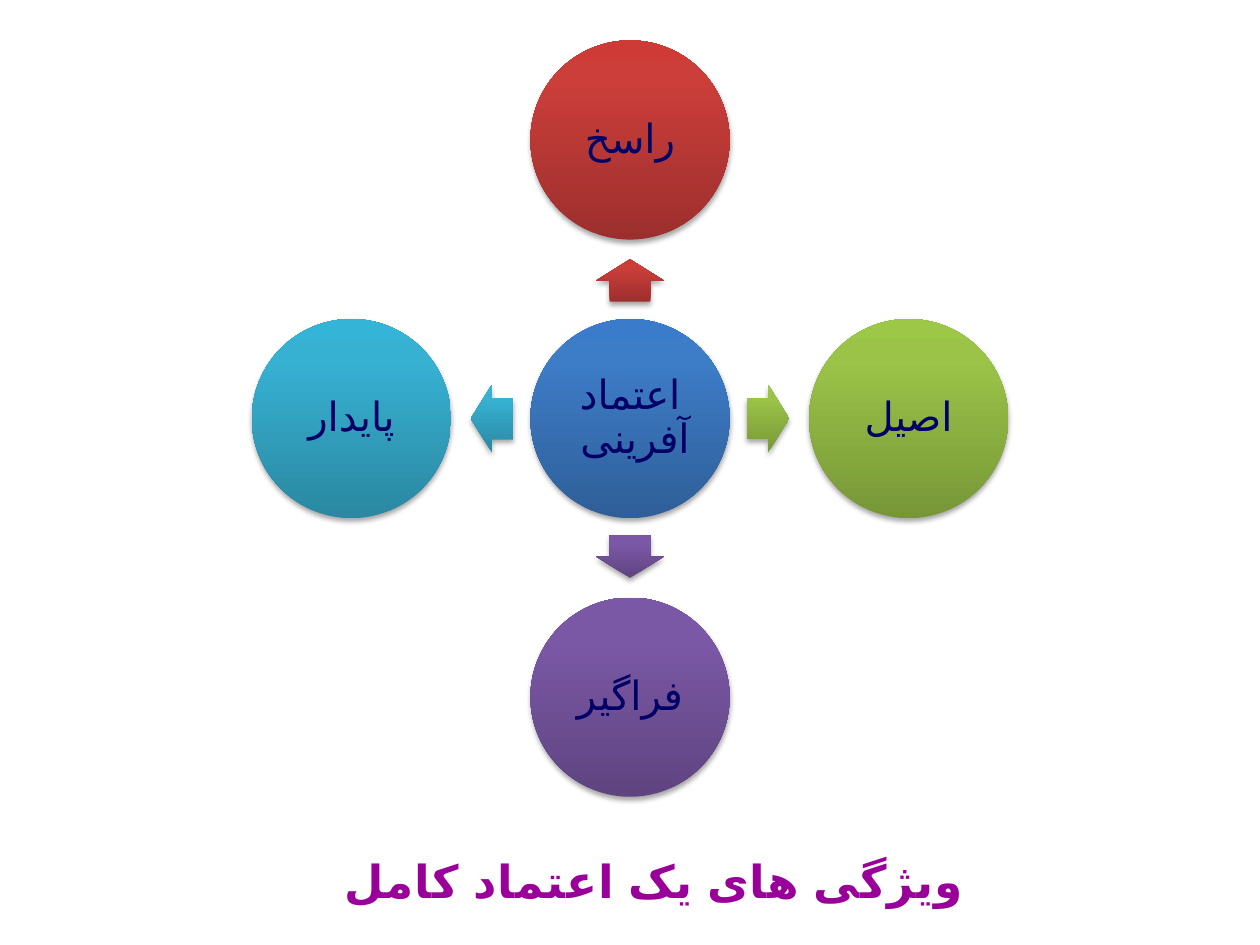
import math
from dataclasses import dataclass

import pptx
import pptx.dml.color
import pptx.enum.lang
import pptx.enum.shapes
import pptx.enum.text
import pptx.oxml
import pptx.oxml.ns
import pptx.util

Pt = pptx.util.Pt
RGB = pptx.dml.color.RGBColor.from_string
Shapes = pptx.enum.shapes.MSO_SHAPE
Anchor = pptx.enum.text.MSO_ANCHOR
Align = pptx.enum.text.PP_ALIGN
qn = pptx.oxml.ns.qn
NAMESPACE = pptx.oxml.ns.nsdecls("a")


@dataclass(frozen=True)
class Theme:
    title_font: str = "Arial"
    title_size: float = 26
    title_color: str = "990099"
    title_outline: str = "CC00CC"
    body_font: str = "Calibri"
    body_size: float = 23
    body_color: str = "000066"
    blue: tuple = ("2F5F99", "3D7CC7", "3A7CCB")
    red: tuple = ("9C2F2D", "CB3E3A", "CE3B37")
    green: tuple = ("779737", "9BC348", "9DC746")
    purple: tuple = ("5F4480", "7B58A6", "7C57A8")
    cyan: tuple = ("2A88A2", "37B1D2", "34B4D6")


class Diagram:
    def __init__(self, slide, theme):
        self.slide = slide
        self.theme = theme

    def add_run(self, paragraph, text, font, size, color):
        run = paragraph.add_run()
        run.text = text
        run.font.name = font
        run.font.size = Pt(size)
        run.font.color.rgb = RGB(color)
        run.font.language_id = pptx.enum.lang.MSO_LANGUAGE_ID.FARSI
        return run

    def title(self, text, left, top, width, height):
        theme = self.theme
        title = self.slide.shapes.title
        title.left, title.top = Pt(left), Pt(top)
        title.width, title.height = Pt(width), Pt(height)
        frame = title.text_frame
        frame.word_wrap = True
        frame.auto_size = pptx.enum.text.MSO_AUTO_SIZE.SHAPE_TO_FIT_TEXT
        frame.vertical_anchor = Anchor.TOP
        paragraph = frame.paragraphs[0]
        paragraph.alignment = Align.CENTER
        run = self.add_run(paragraph, text, theme.title_font, theme.title_size, theme.title_color)
        run.font.bold = True
        properties = run.font._element
        properties.set("spc", "50")
        properties.insert(0, pptx.oxml.parse_xml(
            f'<a:ln {NAMESPACE} w="{Pt(0.9)}"><a:solidFill>'
            f'<a:srgbClr val="{theme.title_outline}"/></a:solidFill></a:ln>'))

    def glossy_shape(self, kind, center_x, center_y, width, height, colors):
        shape = self.slide.shapes.add_shape(
            kind, Pt(center_x - width / 2), Pt(center_y - height / 2), Pt(width), Pt(height))
        shape.line.fill.background()
        shape.shadow.inherit = False
        stops = "".join(
            f'<a:gs pos="{position * 1000}"><a:srgbClr val="{color}"/></a:gs>'
            for position, color in zip((0, 80, 100), colors))
        properties = shape._element.spPr
        properties.find(qn("a:prstGeom")).addnext(pptx.oxml.parse_xml(
            f'<a:gradFill {NAMESPACE} rotWithShape="0"><a:gsLst>{stops}</a:gsLst>'
            '<a:lin ang="16200000" scaled="0"/></a:gradFill>'))
        properties.find(qn("a:effectLst")).append(pptx.oxml.parse_xml(
            f'<a:outerShdw {NAMESPACE} blurRad="{Pt(3.1)}" dist="{Pt(1.8)}" dir="5400000" '
            'rotWithShape="0"><a:srgbClr val="000000"><a:alpha val="35000"/></a:srgbClr>'
            '</a:outerShdw>'))
        return shape

    def circle(self, text, center_x, center_y, diameter, colors):
        theme = self.theme
        shape = self.glossy_shape(Shapes.OVAL, center_x, center_y, diameter, diameter, colors)
        frame = shape.text_frame
        frame.word_wrap = True
        frame.vertical_anchor = Anchor.MIDDLE
        frame.margin_left = frame.margin_right = Pt(2)
        frame.margin_top = frame.margin_bottom = Pt(2)
        paragraph = frame.paragraphs[0]
        paragraph.alignment = Align.CENTER
        paragraph.line_spacing = 0.9
        paragraph._p.get_or_add_pPr().set("rtl", "1")
        self.add_run(paragraph, text, theme.body_font, theme.body_size, theme.body_color)

    def arrow(self, center_x, center_y, width, height, angle, colors):
        shape = self.glossy_shape(Shapes.RIGHT_ARROW, center_x, center_y, width, height, colors)
        shape.adjustments[0] = 0.6
        shape.adjustments[1] = 0.5
        shape.rotation = angle


def main():
    presentation = pptx.Presentation()
    presentation.slide_width, presentation.slide_height = Pt(720), Pt(540)
    theme = Theme()
    diagram = Diagram(presentation.slides.add_slide(presentation.slide_layouts[5]), theme)

    diagram.title("ویژگی های یک اعتماد کامل", 81.4, 483.8, 584.6, 38.9)

    center_x, center_y, diameter = 360, 239.2, 113.8
    circle_distance, arrow_distance = 159.2, 78.9
    diagram.circle("اعتماد آفرینی ", center_x, center_y, diameter, theme.blue)
    traits = [
        ("راسخ", 270, theme.red),
        ("اصیل", 0, theme.green),
        ("فراگیر", 90, theme.purple),
        ("پایدار", 180, theme.cyan),
    ]
    for text, angle, colors in traits:
        across, down = math.cos(math.radians(angle)), math.sin(math.radians(angle))
        diagram.arrow(center_x + arrow_distance * across, center_y + arrow_distance * down,
                      24.2, 38.8, angle, colors)
        diagram.circle(text, center_x + circle_distance * across,
                       center_y + circle_distance * down, diameter, colors)

    presentation.save("out.pptx")


if __name__ == "__main__":
    main()
